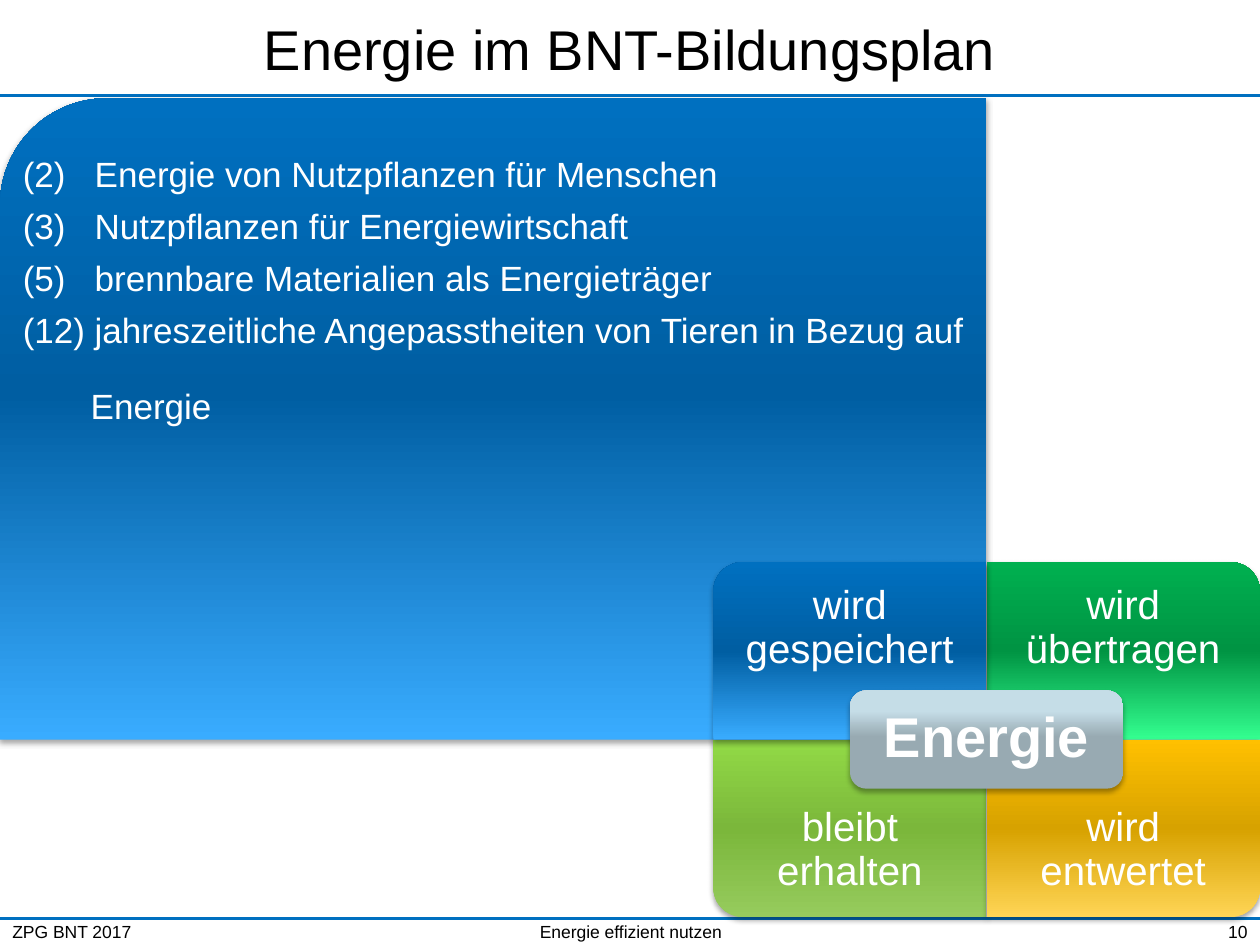
"""Build the slide on energy in the BNT curriculum."""
from dataclasses import dataclass
from typing import Any

from pptx import Presentation
from pptx.dml.color import RGBColor
from pptx.enum.shapes import MSO_CONNECTOR as Connector, MSO_SHAPE as Shape
from pptx.enum.text import MSO_ANCHOR as Anchor, PP_ALIGN as Align
from pptx.oxml import parse_xml
from pptx.oxml.ns import nsdecls
from pptx.util import Cm, Pt

WIDTH, HEIGHT = 25.4, 19.05
CENTER_X, CENTER_Y = 19.89, 14.91
TILE_WIDTH, TILE_HEIGHT = 5.51, 3.58
TITLE_LINE, FOOTER_LINE = 1.93, 18.52
PANEL_TOP = 1.98
BLUE = [(0, "39ACFF"), (50, "005EA2"), (100, "0070C0")]
PANEL_BLUE = [(0, "39ACFF"), (54, "005EA2"), (100, "0070C0")]
GREEN = [(0, "34FF90"), (50, "009443"), (100, "00B050")]
LIME = [(0, "96CB5D"), (50, "7BB73B"), (100, "92DA46")]
AMBER = [(0, "FFD556"), (50, "D7A200"), (100, "FFC000")]
SILVER = [(53, "98AAB2"), (79, "C5DDE7"), (100, "C6DEE9")]
TILES = [
    ("wird übertragen", 1, 0, 0, GREEN),
    ("bleibt erhalten", 0, 1, 180, LIME),
    ("wird entwertet", 1, 1, 90, AMBER),
    ("wird gespeichert", 0, 0, 270, BLUE),
]
TOPICS = [
    "(2)\tEnergie von Nutzpflanzen für Menschen",
    "(3)\tNutzpflanzen für Energiewirtschaft",
    "(5)\tbrennbare Materialien als Energieträger",
    "(12)\tjahreszeitliche Angepasstheiten von Tieren in Bezug auf",
    "Energie",
]
FOOTERS = [
    ("ZPG BNT 2017", 0, 6.91, Align.LEFT),
    ("Energie effizient nutzen", 8.69, 8.05, Align.CENTER),
    ("10", 18.69, 6.71, Align.RIGHT),
]


def color(value):
    return RGBColor.from_string(value)


@dataclass
class Painter:
    slide: Any
    font: str = "Arial"
    accent: str = "0070C0"

    def line(self, y):
        connector = self.slide.shapes.add_connector(
            Connector.STRAIGHT, Cm(0), Cm(y), Cm(WIDTH), Cm(y))
        connector.line.color.rgb = color(self.accent)
        connector.line.width = Pt(1.5)
        connector._element.spPr.append(parse_xml(f"<a:effectLst {nsdecls('a')}/>"))

    def block(self, kind, x, y, width, height, stops, rotation=0):
        if rotation % 180:
            x, y = x + (width - height) / 2, y + (height - width) / 2
            width, height = height, width
        shape = self.slide.shapes.add_shape(kind, Cm(x), Cm(y), Cm(width), Cm(height))
        shape.rotation = rotation
        shape.line.fill.background()
        shape.shadow.inherit = False
        properties = shape._element.spPr
        stop_xml = "".join(
            f'<a:gs pos="{place * 1000}"><a:srgbClr val="{value}"/></a:gs>'
            for place, value in stops)
        properties.insert(2, parse_xml(
            f'<a:gradFill {nsdecls("a")} rotWithShape="0"><a:gsLst>{stop_xml}</a:gsLst>'
            '<a:lin ang="16200000" scaled="0"/></a:gradFill>'))
        properties[-1].append(parse_xml(
            f'<a:outerShdw {nsdecls("a")} blurRad="{Pt(3.1)}" dist="{Pt(1.8)}" '
            'dir="5400000" rotWithShape="0"><a:srgbClr val="000000">'
            '<a:alpha val="35000"/></a:srgbClr></a:outerShdw>'))

    def text(self, content, x, y, width, height, size, ink="FFFFFF", align=Align.CENTER,
             anchor=Anchor.MIDDLE, inset=0.46, spacing=0.9, bold=False):
        box = self.slide.shapes.add_textbox(Cm(x), Cm(y), Cm(width), Cm(height))
        frame = box.text_frame
        frame.text = content
        frame.word_wrap = True
        frame.vertical_anchor = anchor
        frame.margin_left = frame.margin_right = Cm(inset)
        frame.margin_top = frame.margin_bottom = Cm(min(inset, height / 4))
        for paragraph in frame.paragraphs:
            paragraph.alignment = align
            paragraph.line_spacing = spacing
            for run in paragraph.runs:
                run.font.name = self.font
                run.font.size = Pt(size)
                run.font.bold = bold
                run.font.color.rgb = color(ink)
        return frame

    def topics(self, lines, x, y, width, height):
        frame = self.text("\n".join(lines), x, y, width, height, 20,
                          align=Align.LEFT, anchor=Anchor.TOP)
        frame.margin_right = Cm(0.2)
        for paragraph in frame.paragraphs:
            paragraph.space_after = Pt(8)
            hanging = "\t" in paragraph.text
            properties = paragraph._p.get_or_add_pPr()
            properties.set("marL", str(Cm(1.45 if hanging else 1.37)))
            properties.set("indent", str(Cm(-1.45 if hanging else 0)))
        frame.paragraphs[-1].space_before = Pt(14)


def main():
    presentation = Presentation()
    presentation.slide_width, presentation.slide_height = Cm(WIDTH), Cm(HEIGHT)
    painter = Painter(presentation.slides.add_slide(presentation.slide_layouts[6]))

    for y in (TITLE_LINE, FOOTER_LINE):
        painter.line(y)
    painter.text("Energie im BNT-Bildungsplan", 0, 0, WIDTH, TITLE_LINE, 32,
                 ink="000000", inset=0.25, spacing=1)
    for label, x, width, align in FOOTERS:
        painter.text(label, x, FOOTER_LINE, width, HEIGHT - FOOTER_LINE, 10,
                     ink="000000", align=align, inset=0.25, spacing=1)

    painter.block(Shape.ROUND_1_RECTANGLE, 0, PANEL_TOP, CENTER_X,
                  CENTER_Y - PANEL_TOP, PANEL_BLUE, 270)
    painter.topics(TOPICS, 0, 2.72, CENTER_X, 12.19)

    for label, column, row, rotation, stops in TILES:
        x = CENTER_X + (column - 1) * TILE_WIDTH
        y = CENTER_Y + (row - 1) * TILE_HEIGHT
        painter.block(Shape.ROUND_1_RECTANGLE, x, y, TILE_WIDTH, TILE_HEIGHT, stops, rotation)
        painter.text(label, x, y + row * TILE_HEIGHT / 4, TILE_WIDTH, TILE_HEIGHT * 0.75, 23)

    button = (CENTER_X - TILE_WIDTH / 2, CENTER_Y - 0.99, TILE_WIDTH, 1.98)
    painter.block(Shape.ROUNDED_RECTANGLE, *button, SILVER)
    painter.text("Energie", *button, 32, inset=0.33, bold=True)

    presentation.save("out.pptx")


if __name__ == "__main__":
    main()
